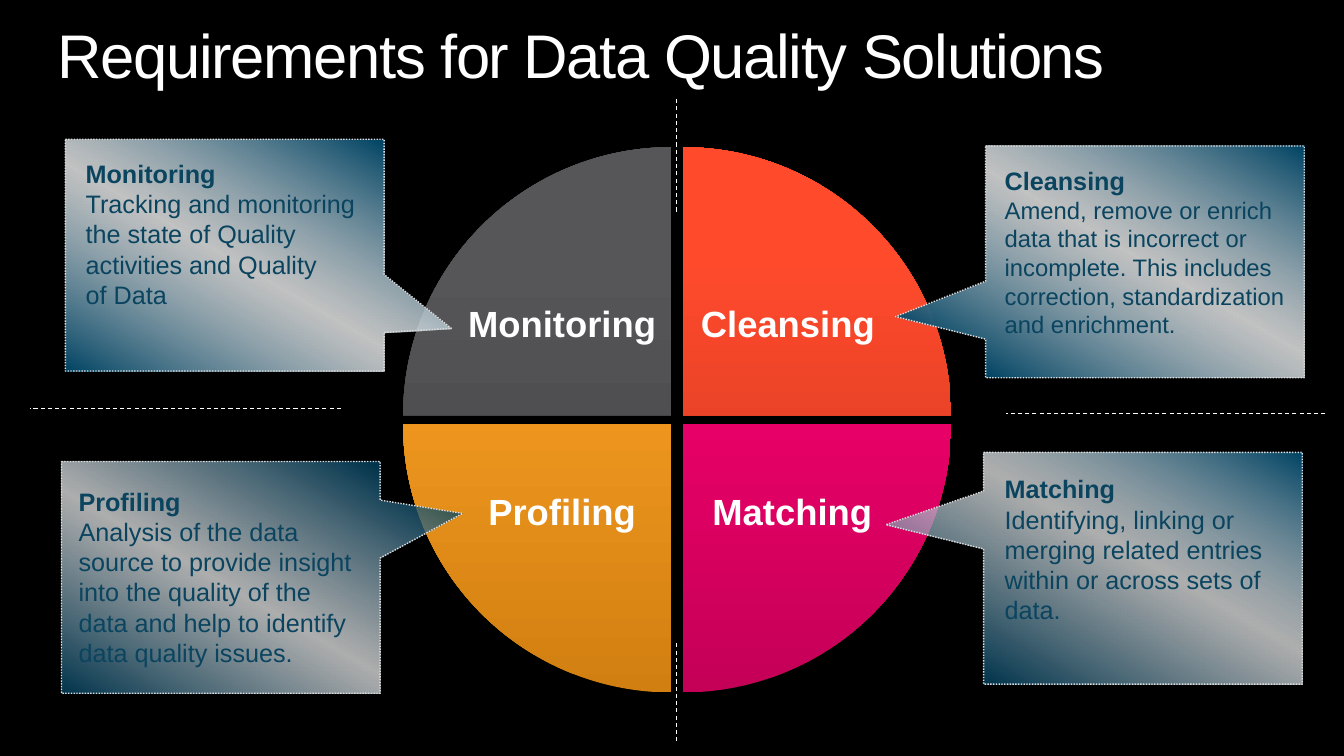
from lxml.etree import SubElement
from pptx import Presentation
from pptx.dml.color import RGBColor
from pptx.enum.dml import MSO_LINE
from pptx.enum.shapes import MSO_CONNECTOR, MSO_SHAPE
from pptx.enum.text import MSO_ANCHOR, PP_ALIGN
from pptx.oxml.ns import qn
from pptx.util import Cm, Pt

BLACK = RGBColor(0x00, 0x00, 0x00)
WHITE = RGBColor(0xFF, 0xFF, 0xFF)
NAVY = RGBColor(0x00, 0x43, 0x63)
TEAL = RGBColor(0x0A, 0x44, 0x5F)
SILVER = RGBColor(0xDD, 0xDD, 0xDD)
RED = [RGBColor(0xC7, 0x37, 0x1F), RGBColor(0xFF, 0x4A, 0x2C), RGBColor(0xFF, 0x4B, 0x2E)]
PINK = [RGBColor(0xC4, 0x00, 0x57), RGBColor(0xFE, 0x00, 0x71), RGBColor(0xFF, 0x00, 0x71)]
ORANGE = [RGBColor(0xD1, 0x7F, 0x11), RGBColor(0xFF, 0xA3, 0x26), RGBColor(0xFF, 0xA3, 0x27)]
GREY = [RGBColor(0x42, 0x41, 0x43), RGBColor(0x56, 0x55, 0x57), RGBColor(0x57, 0x55, 0x58)]

FONT = "Arial"
PIE_SIZE = 13.51
CALLOUT_W, CALLOUT_H = 8.03, 5.84
LABEL_W, LABEL_H = 4.98, 4.01

QUARTERS = [
    ("Cleansing", 10.46, 3.71, 162, 0, RED, 17.37, 6.2),
    ("Matching", 10.46, 3.94, 0, 54, PINK, 17.48, 10.95),
    ("Profiling", 10.16, 3.94, 54, 108, ORANGE, 11.68, 10.95),
    ("Monitoring", 10.16, 3.71, 108, 162, GREY, 11.68, 6.2),
]

DIVIDERS = [
    (17.04, 5.33, 17.04, 2.49),
    (8.59, 10.29, 0.76, 10.29),
    (17.04, 16.21, 17.04, 18.75),
    (33.4, 10.41, 25.35, 10.41),
]

SOLID = [(0, NAVY, 100), (50, WHITE, 76), (100, NAVY, 100)]
SHEER = [(1, NAVY, 76), (51, WHITE, 68), (100, NAVY, 76)]
MIXED = [(0, NAVY, 100), (48, WHITE, 68), (100, NAVY, 76)]

CALLOUTS = [
    (1.65, 3.51, (0.711, 0.316), SOLID, (1.91, 3.86, 7.65, 4.95), 18,
     ["Monitoring\vTracking and monitoring", "the state of Quality",
      "activities and Quality", "of Data"]),
    (24.84, 3.68, (-0.783, 0.236), SOLID, (25.07, 4.04, 7.87, 5.74), 17,
     ["Cleansing\vAmend, remove or enrich data that is incorrect or incomplete. "
      "This includes correction, standardization and enrichment."]),
    (1.55, 11.63, (0.759, -0.276), SHEER, (1.73, 12.12, 7.65, 4.88), 18,
     ["Profiling\vAnalysis of the data source to provide insight into the quality "
      "of the data and help to identify data quality issues."]),
    (24.79, 11.4, (-0.807, -0.188), MIXED, (25.07, 11.81, 7.65, 4.95), 18,
     ["Matching\vIdentifying, linking or merging related entries within or across "
      "sets of data."]),
]


def set_gradient(sp, stops, angle):
    """Fill a shape with (position, colour, opacity) stops at a clockwise angle."""
    sp.fill.gradient()
    grad = sp._element.spPr.find(qn("a:gradFill"))
    for child in list(grad):
        grad.remove(child)
    stop_list = SubElement(grad, qn("a:gsLst"))
    for position, color, opacity in stops:
        stop = SubElement(stop_list, qn("a:gs"), pos=str(position * 1000))
        clr = SubElement(stop, qn("a:srgbClr"), val=str(color))
        if opacity < 100:
            SubElement(clr, qn("a:alpha"), val=str(opacity * 1000))
    SubElement(grad, qn("a:lin"), ang=str(angle * 60000), scaled="0")


def format_run(r, size, color, bold=False):
    """Set the font of a run."""
    r.font.name = FONT
    r.font.size = Pt(size)
    r.font.bold = bold
    r.font.color.rgb = color


def add_text(s, left, top, width, height, margin=None):
    """Add a wrapping text box and return its text frame."""
    tf = s.shapes.add_textbox(Cm(left), Cm(top), Cm(width), Cm(height)).text_frame
    tf.word_wrap = True
    if margin is not None:
        tf.margin_left = tf.margin_right = tf.margin_top = tf.margin_bottom = Cm(margin)
    return tf


def add_title(s, text):
    """Add the slide title with tightened letter spacing."""
    tf = add_text(s, 1.45, 0.64, 30.96, 1.7, margin=0)
    tf.text = text
    p = tf.paragraphs[0]
    p.line_spacing = 0.9
    r = p.runs[0]
    format_run(r, 44, WHITE)
    r.font._element.set("spc", "-100")


def add_quarter(s, name, left, top, start, end, colors, label_left, label_top):
    """Add a quarter of the circle with its label."""
    sp = s.shapes.add_shape(MSO_SHAPE.PIE, Cm(left), Cm(top), Cm(PIE_SIZE), Cm(PIE_SIZE))
    sp.adjustments[0], sp.adjustments[1] = start, end
    sp.shadow.inherit = False
    sp.line.fill.background()
    set_gradient(sp, [(pos, c, 100) for pos, c in zip((0, 80, 100), colors)], 270)
    tf = add_text(s, label_left, label_top, LABEL_W, LABEL_H, margin=0.1)
    tf.vertical_anchor = MSO_ANCHOR.MIDDLE
    tf.text = name
    p = tf.paragraphs[0]
    p.alignment = PP_ALIGN.CENTER
    p.line_spacing = 0.9
    format_run(p.runs[0], 26, WHITE, bold=True)


def add_divider(s, x1, y1, x2, y2):
    """Add a thin dashed line."""
    line = s.shapes.add_connector(MSO_CONNECTOR.STRAIGHT, Cm(x1), Cm(y1), Cm(x2), Cm(y2))
    line.line.color.rgb = WHITE
    line.line.width = Pt(0.75)
    line.line.dash_style = MSO_LINE.DASH
    SubElement(line._element.spPr, qn("a:effectLst"))


def add_callout(s, left, top, tip, stops, text_box, size, paragraphs):
    """Add a callout with a bold heading and its description."""
    sp = s.shapes.add_shape(MSO_SHAPE.RECTANGULAR_CALLOUT, Cm(left), Cm(top),
                            Cm(CALLOUT_W), Cm(CALLOUT_H))
    sp.adjustments[0], sp.adjustments[1] = tip
    sp.shadow.inherit = False
    set_gradient(sp, stops, 120)
    sp.line.color.rgb = SILVER
    sp.line.width = Pt(1)
    sp.line.dash_style = MSO_LINE.ROUND_DOT
    tf = add_text(s, *text_box)
    tf.text = "\n".join(paragraphs)
    for p in tf.paragraphs:
        for r in p.runs:
            format_run(r, size, TEAL)
    format_run(tf.paragraphs[0].runs[0], 18, TEAL, bold=True)


def main():
    """Build the slide and save it."""
    prs = Presentation()
    prs.slide_width, prs.slide_height = Cm(33.87), Cm(19.05)
    s = prs.slides.add_slide(prs.slide_layouts[6])
    s.background.fill.solid()
    s.background.fill.fore_color.rgb = BLACK
    add_title(s, "Requirements for Data Quality Solutions")
    for quarter in QUARTERS:
        add_quarter(s, *quarter)
    for divider in DIVIDERS:
        add_divider(s, *divider)
    for callout in CALLOUTS:
        add_callout(s, *callout)
    prs.save("out.pptx")


if __name__ == "__main__":
    main()
